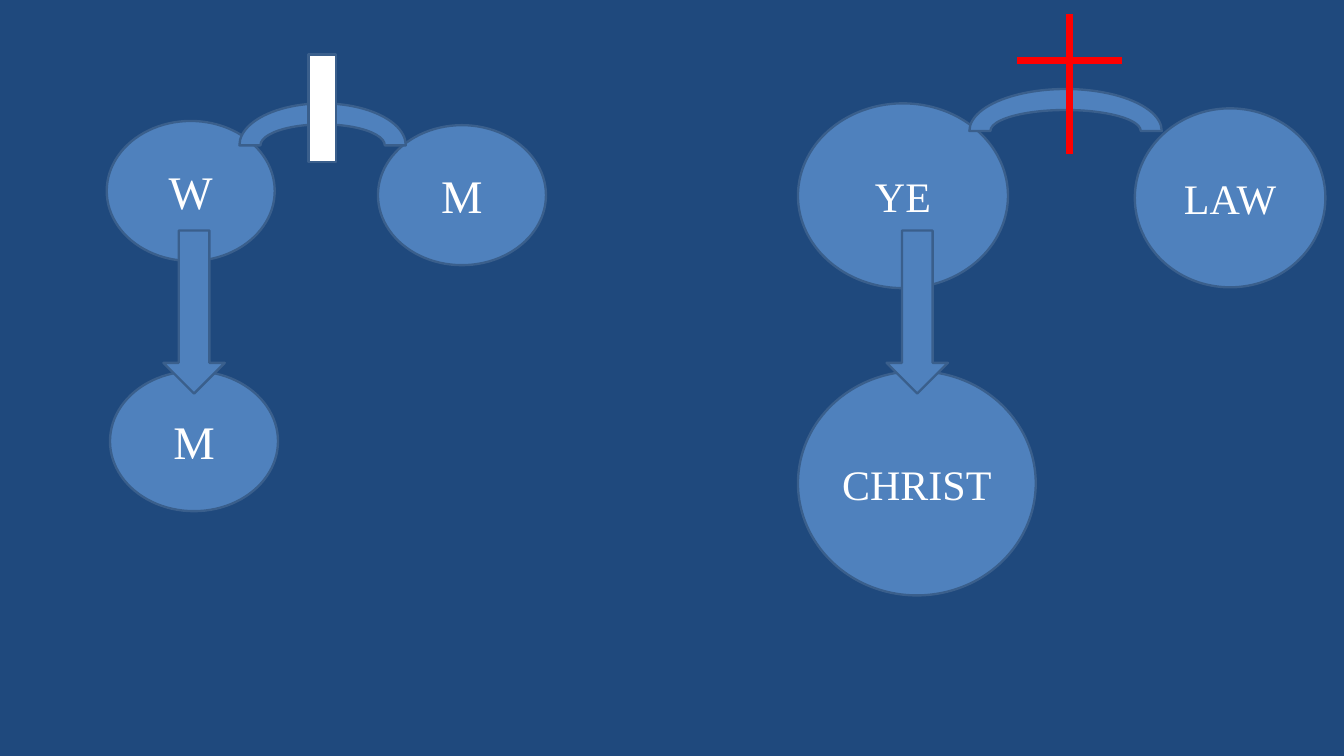
from lxml import etree
from pptx import Presentation
from pptx.dml.color import RGBColor
from pptx.enum import shapes, text
from pptx.oxml import ns
from pptx.util import Pt

COLORS = {
    "background": "1F497D",
    "node": "4F81BD",
    "outline": "3A5F8C",
    "white": "FFFFFF",
    "cross": "FF0000",
}
FONT = "Times New Roman"
SHAPE = shapes.MSO_SHAPE


def rgb(name):
    return RGBColor.from_string(COLORS[name])


def add_figure(slide, kind, left, top, width, height, fill="node"):
    figure = slide.shapes.add_shape(kind, Pt(left), Pt(top), Pt(width), Pt(height))
    figure.shadow.inherit = False
    figure.fill.solid()
    figure.fill.fore_color.rgb = rgb(fill)
    figure.line.color.rgb = rgb("outline")
    figure.line.width = Pt(2)
    return figure


def write_text(figure, wording, size=36, color="white",
               align=text.PP_ALIGN.CENTER, anchor=text.MSO_ANCHOR.MIDDLE):
    frame = figure.text_frame
    frame.word_wrap = True
    frame.vertical_anchor = anchor
    paragraph = frame.paragraphs[0]
    paragraph.alignment = align
    run = paragraph.add_run()
    run.text = wording
    run.font.name = FONT
    run.font.size = Pt(size)
    run.font.color.rgb = rgb(color)


def add_person(slide, label, left, top, width=144, height=120, size=40):
    person = add_figure(slide, SHAPE.OVAL, left, top, width, height)
    write_text(person, label, size=size)


def add_bond(slide, left, top, width):
    """Draw the arc that joins two circles."""
    add_figure(slide, SHAPE.BLOCK_ARC, left, top, width, 72)


def add_down_arrow(slide, left):
    arrow = add_figure(slide, SHAPE.RIGHT_ARROW, left, 241.2, 139.7, 52.6)
    arrow.rotation = 90


def add_cross_bar(slide, x1, y1, x2, y2):
    bar = slide.shapes.add_connector(
        shapes.MSO_CONNECTOR.STRAIGHT, Pt(x1), Pt(y1), Pt(x2), Pt(y2))
    bar.line.color.rgb = rgb("cross")
    bar.line.width = Pt(6)
    etree.SubElement(bar._element.spPr, ns.qn("a:effectLst"))


def add_marriage(slide):
    add_person(slide, "W", 91.5, 103.7)
    add_person(slide, "M", 324, 107.3)
    add_bond(slide, 205.2, 88.6, 142.6)
    add_person(slide, "M", 94.3, 318.2)
    add_down_arrow(slide, 96.5)
    add_figure(slide, SHAPE.RECTANGLE, 264.5, 46.8, 23.8, 92.2, fill="white")


def add_law_and_christ(slide):
    add_person(slide, "LAW", 972.7, 92.9, 163.4, 153.4, size=36)
    add_person(slide, "YE", 684, 88.6, 180, 158.4, size=36)
    add_person(slide, "CHRIST", 684, 318.2, 203.8, 192.2, size=36)
    add_bond(slide, 830.9, 76.3, 164.9)
    add_cross_bar(slide, 917, 12, 917, 132)
    add_cross_bar(slide, 962, 51.5, 872, 51.5)
    add_down_arrow(slide, 716.4)


def main():
    deck = Presentation()
    deck.slide_width, deck.slide_height = Pt(1152), Pt(648)
    slide = deck.slides.add_slide(deck.slide_layouts[6])
    slide.background.fill.solid()
    slide.background.fill.fore_color.rgb = rgb("background")
    add_marriage(slide)
    add_law_and_christ(slide)
    deck.save("out.pptx")


if __name__ == "__main__":
    main()
